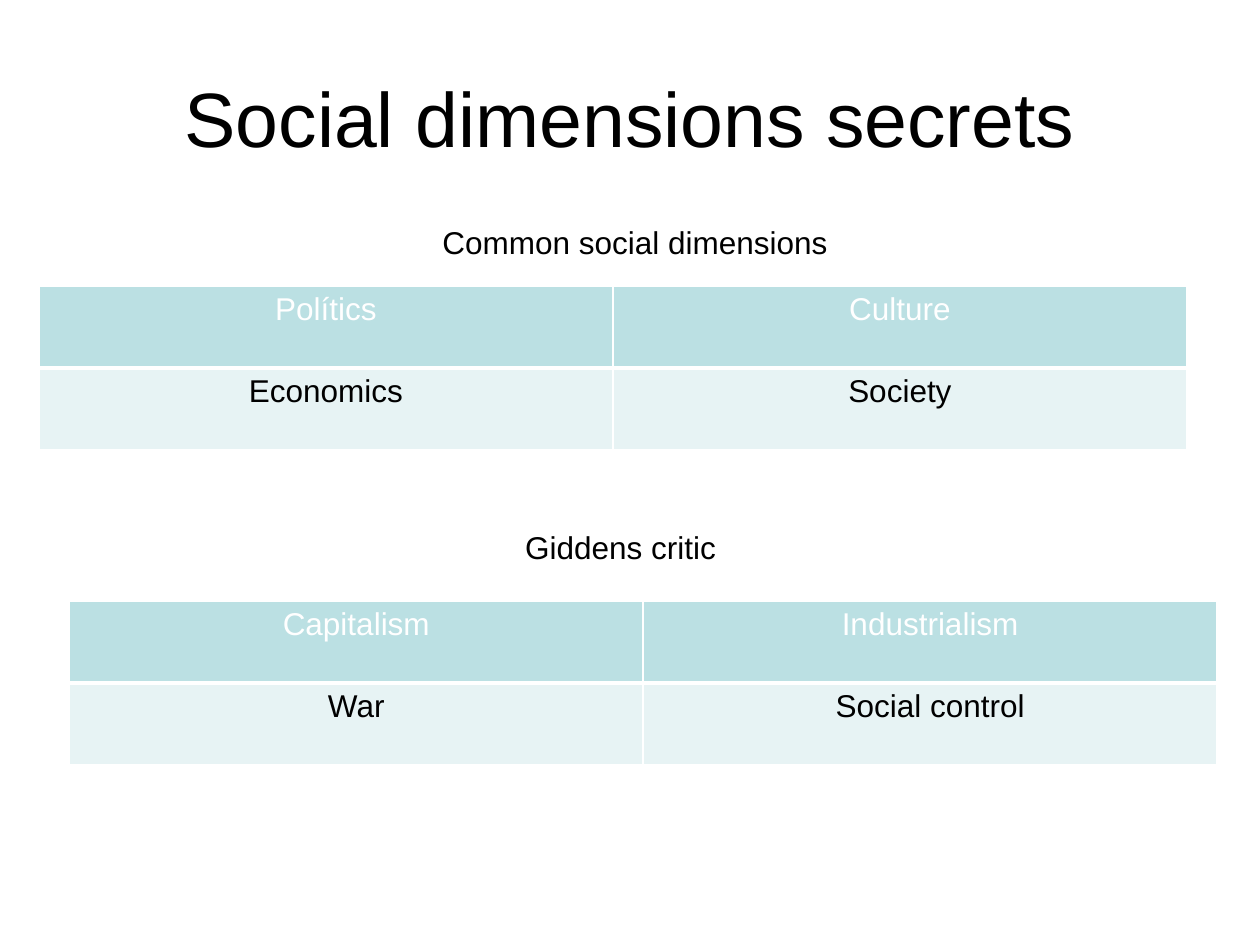
"""Build a slide comparing two sets of social dimensions in captioned tables."""
from dataclasses import dataclass

import lxml.etree
import pptx
import pptx.dml.color
import pptx.enum.text
import pptx.oxml.ns
import pptx.util

COLORS = {"text": "000000", "white": "FFFFFF", "header": "BBE0E3", "body": "E7F3F4"}
FONT = "Arial"
WIDTH, HEIGHT = pptx.util.Inches(10), pptx.util.Inches(7.5)


@dataclass(frozen=True)
class Box:
    """Hold a position and size in percent of the slide."""
    x: float
    y: float
    w: float
    h: float

    def emu(self) -> tuple[int, int, int, int]:
        """Convert the percentages to slide units."""
        return (int(WIDTH * self.x / 100), int(HEIGHT * self.y / 100),
                int(WIDTH * self.w / 100), int(HEIGHT * self.h / 100))


@dataclass(frozen=True)
class Section:
    """Describe a caption and the table under it."""
    caption: str
    caption_box: Box
    table_box: Box
    rows: tuple[tuple[str, str], ...]


TITLE_BOX = Box(5, 4, 90, 16.67)
SECTIONS = (
    Section("Common social dimensions ", Box(14.8, 22.93, 71.9, 5.33),
            Box(3.1, 30.27, 91.1, 17.33),
            (("Polítics", "Culture"), ("Economics", "Society"))),
    Section("Giddens critic", Box(13.3, 55.2, 71.9, 5.33),
            Box(5.5, 63.6, 91.1, 17.33),
            (("Capitalism", "Industrialism"), ("War", "Social control"))),
)


def rgb(name: str) -> pptx.dml.color.RGBColor:
    """Look up a named colour."""
    return pptx.dml.color.RGBColor.from_string(COLORS[name])


def write(tf, text: str, size: float, color: str) -> None:
    """Write one centred, formatted paragraph."""
    tf.text = text
    p = tf.paragraphs[0]
    p.alignment = pptx.enum.text.PP_ALIGN.CENTER
    for r in p.runs:
        r.font.name = FONT
        r.font.size = pptx.util.Pt(size)
        r.font.color.rgb = rgb(color)


def add_text(s, box: Box, text: str, size: float, anchor) -> None:
    """Add a wrapping text box."""
    tf = s.shapes.add_textbox(*box.emu()).text_frame
    tf.word_wrap = True
    tf.vertical_anchor = anchor
    write(tf, text, size, "text")


def add_borders(cell, bottom: float) -> None:
    """Outline a cell in white with the given bottom width in points."""
    qn = pptx.oxml.ns.qn
    tc_pr = cell._tc.get_or_add_tcPr()
    for side, width in (("L", 1), ("R", 1), ("T", 1), ("B", bottom)):
        ln = lxml.etree.SubElement(tc_pr, qn(f"a:ln{side}"), w=str(pptx.util.Pt(width)))
        fill = lxml.etree.SubElement(ln, qn("a:solidFill"))
        lxml.etree.SubElement(fill, qn("a:srgbClr"), val=COLORS["white"])


def add_table(s, box: Box, rows: tuple[tuple[str, str], ...]) -> None:
    """Add a table with a header row."""
    table = s.shapes.add_table(len(rows), len(rows[0]), *box.emu()).table
    for i, row in enumerate(rows):
        fill, color, bottom = ("body", "text", 1) if i else ("header", "white", 3)
        for j, text in enumerate(row):
            cell = table.cell(i, j)
            add_borders(cell, bottom)
            cell.fill.solid()
            cell.fill.fore_color.rgb = rgb(fill)
            write(cell.text_frame, text, 18, color)


def main() -> None:
    """Build and save the slide."""
    prs = pptx.Presentation()
    prs.slide_width, prs.slide_height = WIDTH, HEIGHT
    s = prs.slides.add_slide(prs.slide_layouts[6])
    anchors = pptx.enum.text.MSO_ANCHOR
    add_text(s, TITLE_BOX, "Social dimensions secrets", 44, anchors.MIDDLE)
    for section in SECTIONS:
        add_text(s, section.caption_box, section.caption, 18, anchors.TOP)
        add_table(s, section.table_box, section.rows)
    prs.save("out.pptx")


if __name__ == "__main__":
    main()
